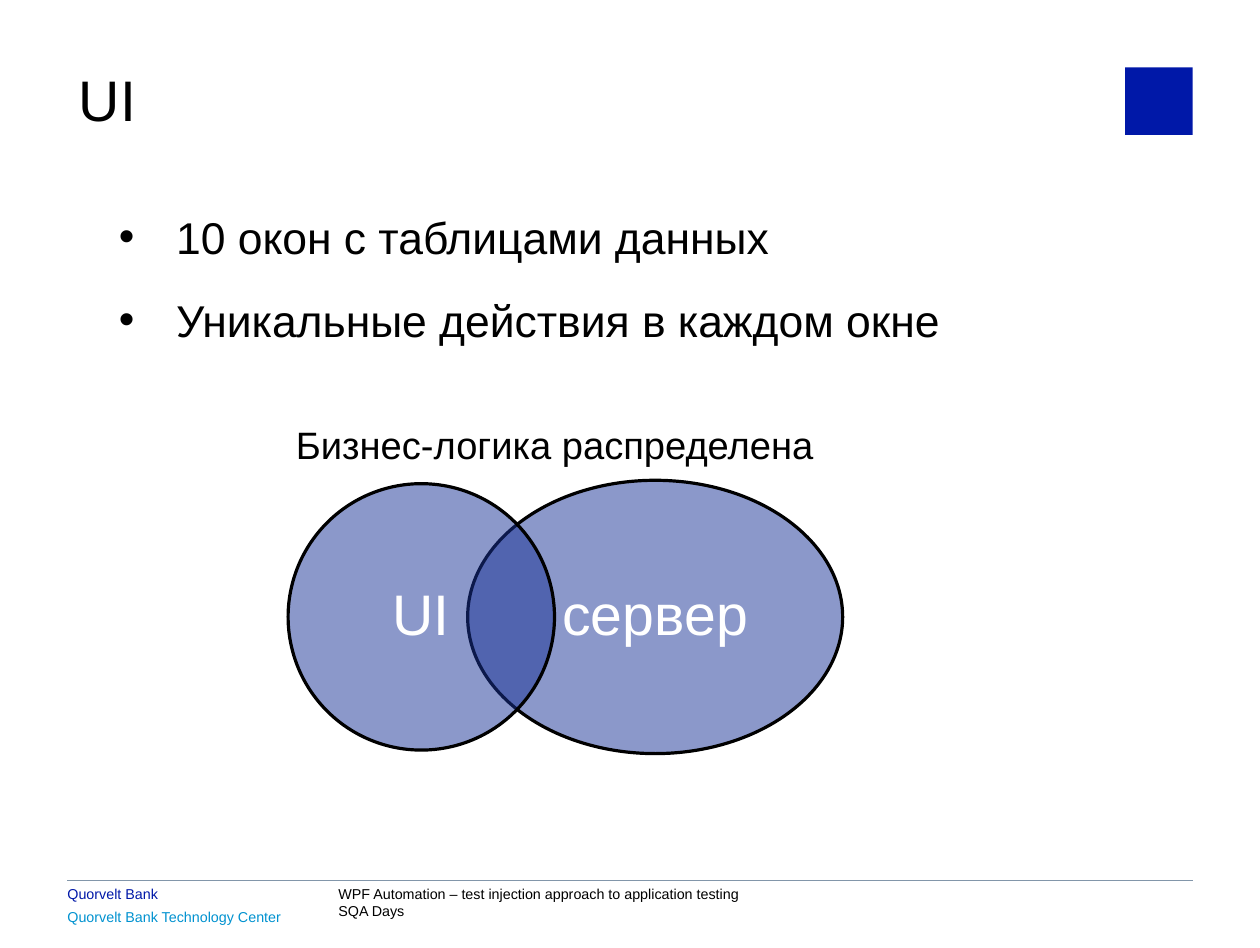
"""Build the UI slide: two bullets and a diagram of shared business logic."""
import pptx
import pptx.dml.color
import pptx.enum.shapes
import pptx.enum.text
import pptx.oxml.ns
import pptx.util
from lxml import etree

PX = 9144
FONT = "Arial"
COLORS = {
    "text": "000000", "white": "FFFFFF", "ellipse": "193296",
    "brand": "0018A8", "center": "0092D0", "rule": "8296AA",
}
TITLE = "UI"
BULLETS = ["10 окон с таблицами данных", "Уникальные действия в каждом окне"]
CAPTION = "Бизнес-логика распределена"
ELLIPSES = [
    ("сервер", (409, 420, 328, 239)),
    ("UI", (252, 423, 233, 233)),
]
FOOTERS = [
    (["Quorvelt Bank"], (59, 774, 200, 16), "brand"),
    (["Quorvelt Bank Technology Center"], (59, 794, 230, 16), "center"),
    (["WPF Automation – test injection approach to application testing",
      "SQA Days"], (296, 774, 400, 32), "text"),
]
MARGIN_LEFT, MARGIN_RIGHT, RULE_TOP = 59, 1043, 770
EMBLEM_SIZE = 59
ANCHOR = pptx.enum.text.MSO_ANCHOR
ALIGN = pptx.enum.text.PP_ALIGN


def emu(*lengths):
    return [pptx.util.Emu(length * PX) for length in lengths]


def color(name):
    return pptx.dml.color.RGBColor.from_string(COLORS[name])


def child(parent, tag, **attributes):
    element = etree.SubElement(parent, pptx.oxml.ns.qn(tag))
    for key, value in attributes.items():
        element.set(key, value)
    return element


def place(shape, box):
    shape.left, shape.top, shape.width, shape.height = emu(*box)


def write(shape, lines, size, color_name, spacing=1.0, align=ALIGN.LEFT,
          anchor=ANCHOR.TOP, insets=(10, 5), bullet=False, gap=0):
    frame = shape.text_frame
    frame.word_wrap = True
    frame.auto_size = pptx.enum.text.MSO_AUTO_SIZE.NONE
    frame.vertical_anchor = anchor
    frame.margin_left, frame.margin_top = emu(*insets)
    frame.margin_right, frame.margin_bottom = emu(*insets)
    for index, line in enumerate(lines):
        paragraph = frame.add_paragraph() if index else frame.paragraphs[0]
        if bullet:
            properties = paragraph._p.get_or_add_pPr()
            properties.set("marL", str(50 * PX))
            properties.set("indent", str(-50 * PX))
            child(properties, "a:buFont", typeface=FONT)
            child(properties, "a:buChar", char="•")
        paragraph.alignment = align
        paragraph.line_spacing = spacing
        paragraph.space_before = pptx.util.Pt(gap if index else 0)
        paragraph.space_after = pptx.util.Pt(0)
        run = paragraph.add_run()
        run.text = line
        run.font.name = FONT
        run.font.size = pptx.util.Pt(size)
        run.font.color.rgb = color(color_name)


def add_text(slide, box, lines, size, color_name, **options):
    shape = slide.shapes.add_textbox(*emu(*box))
    write(shape, lines, size, color_name, **options)


def add_rule(slide):
    rule = slide.shapes.add_connector(
        pptx.enum.shapes.MSO_CONNECTOR.STRAIGHT,
        *emu(MARGIN_LEFT, RULE_TOP, MARGIN_RIGHT, RULE_TOP))
    rule.line.color.rgb = color("rule")
    rule.line.width = pptx.util.Pt(0.5)
    child(rule._element.spPr, "a:effectLst")


def add_emblem(slide):
    emblem = slide.shapes.add_shape(
        pptx.enum.shapes.MSO_SHAPE.RECTANGLE,
        *emu(MARGIN_RIGHT - EMBLEM_SIZE, 59, EMBLEM_SIZE, EMBLEM_SIZE))
    emblem.shadow.inherit = False
    emblem.fill.solid()
    emblem.fill.fore_color.rgb = color("brand")
    emblem.line.fill.background()


def add_ellipse(slide, label, box):
    ellipse = slide.shapes.add_shape(
        pptx.enum.shapes.MSO_SHAPE.OVAL, *emu(*box))
    ellipse.shadow.inherit = False
    ellipse.fill.solid()
    ellipse.fill.fore_color.rgb = color("ellipse")
    fill_color = ellipse._element.spPr.find(
        "a:solidFill/a:srgbClr", pptx.oxml.ns._nsmap)
    child(fill_color, "a:alpha", val="50000")
    ellipse.line.color.rgb = color("text")
    ellipse.line.width = pptx.util.Pt(2)
    write(ellipse, [label], 36, "white", spacing=0.9, align=ALIGN.CENTER,
          anchor=ANCHOR.MIDDLE, insets=(15, 15))


def main():
    presentation = pptx.Presentation()
    presentation.slide_width, presentation.slide_height = emu(1102, 829)
    slide = presentation.slides.add_slide(presentation.slide_layouts[1])
    title, body = slide.placeholders
    place(title, (59, 57, 800, 66))
    write(title, [TITLE], 36, "text", spacing=0.93)
    place(body, (94, 155, 748, 151))
    write(body, BULLETS, 28, "text", spacing=1.5, bullet=True, gap=2)
    add_rule(slide)
    add_emblem(slide)
    for lines, box, color_name in FOOTERS:
        add_text(slide, box, lines, 9, color_name, insets=(0, 0))
    for label, box in ELLIPSES:
        add_ellipse(slide, label, box)
    add_text(slide, (249, 367, 500, 48), [CAPTION], 24, "text", spacing=0.93)
    presentation.save("out.pptx")


if __name__ == "__main__":
    main()
